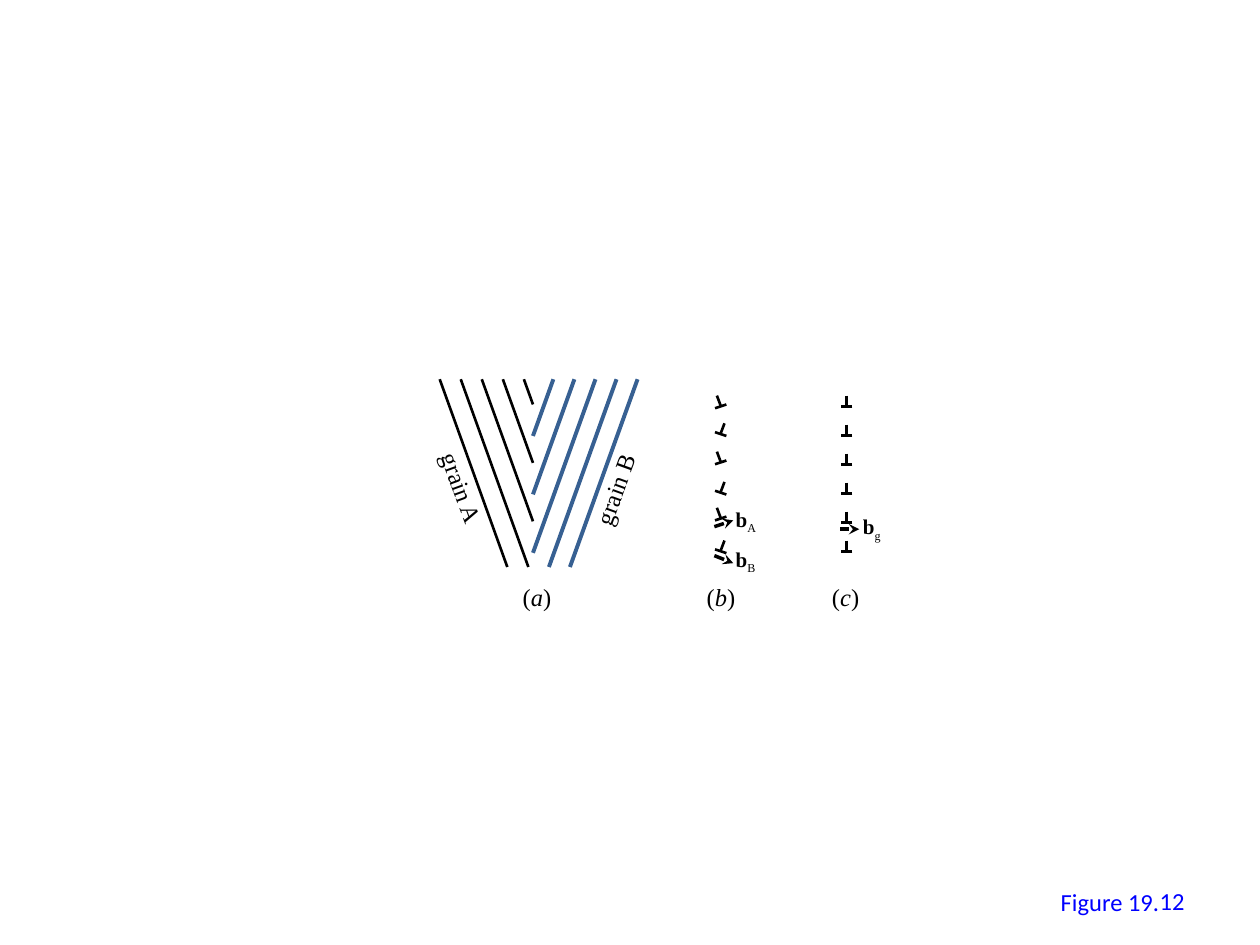
from lxml import etree
from pptx import Presentation
from pptx.dml.color import RGBColor
from pptx.enum.shapes import MSO_CONNECTOR
from pptx.enum.text import MSO_ANCHOR, PP_ALIGN
from pptx.oxml.ns import qn
from pptx.util import Inches, Pt

STRAIGHT = MSO_CONNECTOR.STRAIGHT
MIDDLE = MSO_ANCHOR.MIDDLE
RIGHT = PP_ALIGN.RIGHT
COLORS = {"ink": "000000", "grain_b": "376092", "figure": "0000FF"}
SERIF, SANS = "Times New Roman", "Calibri"
SLIDE_W, SLIDE_H = Inches(10), Inches(7.5)
COLUMNS, ROWS = 1000, 750


def x_at(column):
    return round(column * SLIDE_W / COLUMNS)


def y_at(row):
    return round(row * SLIDE_H / ROWS)


def add_line(shapes, start, end, color="ink", weight=1.5, arrow=False):
    line = shapes.add_connector(
        STRAIGHT, x_at(start[0]), y_at(start[1]), x_at(end[0]), y_at(end[1]))
    line.line.color.rgb = RGBColor.from_string(COLORS[color])
    line.line.width = Pt(weight)
    properties = line._element.spPr
    if arrow:
        etree.SubElement(properties.find(qn("a:ln")), qn("a:tailEnd"), type="stealth")
    etree.SubElement(properties, qn("a:effectLst"))


def add_label(slide, box, words, size=14, font=SERIF, color="ink", wrap=False):
    left, top, width, height = box
    label = slide.shapes.add_textbox(x_at(left), y_at(top), x_at(width), y_at(height))
    label.text_frame.word_wrap = wrap
    paragraph = label.text_frame.paragraphs[0]
    for word in words:
        paragraph.add_run().text = word
    paragraph.font.size = Pt(size)
    paragraph.font.name = font
    paragraph.font.color.rgb = RGBColor.from_string(COLORS[color])
    for run in paragraph.runs:
        run.font.size = Pt(size)
        run.font.name = font
        run.font.color.rgb = RGBColor.from_string(COLORS[color])
    return label


def add_caption(slide, center, letter):
    caption = add_label(slide, (center - 21.5, 457, 43, 34), ["(", letter, ")"])
    caption.text_frame.paragraphs[0].runs[1].font.italic = True


def add_burgers_vector(slide, start, end, label_at, subscript):
    add_line(slide.shapes, start, end, weight=2, arrow=True)
    label = add_label(slide, (*label_at, 38, 30), ["b", subscript], size=12)
    symbol, index = label.text_frame.paragraphs[0].runs
    symbol.font.bold = True
    index._r.get_or_add_rPr().set("baseline", "-25000")


def add_dislocation(shapes, center, top, lean=0):
    foot, tilt = top + 8.5, 1.5 * lean
    add_line(shapes, (center + 3 * lean, top), (center, top + 8))
    add_line(shapes, (center + 4.5, foot + tilt), (center - 4.5, foot - tilt))


def draw_grains(slide, box):
    left, top, width, height = box
    boundary, gap, slope = left + 74, 16.7, 0.36
    grains = ((left, 1, "ink", 1.5), (left + width, -1, "grain_b", 2.25))
    for edge, direction, color, weight in grains:
        for plane in range(5):
            start = edge + direction * gap * plane
            drop = min(height, abs(boundary - start) / slope)
            end = (start + direction * slope * drop, top + drop)
            add_line(slide.shapes, (start, top), end, color, weight)
    for name, label_left, angle in (("grain B", 449, 289.9), ("grain A", 327, 70.1)):
        add_label(slide, (label_left, top + 70, 79, 34), [name]).rotation = angle
    add_caption(slide, boundary + 3.5, "a")


def draw_alternating_wall(slide, box):
    left, top, width, height = box
    center = left + width / 2
    for lean, first, pitch in ((-1, top, 44.5), (1, top + 22, 46.5)):
        for step in range(3):
            symbol = slide.shapes.add_group_shape()
            add_dislocation(symbol.shapes, center, first + step * pitch, lean)
    bottom = top + height
    add_burgers_vector(slide, (left, bottom - 21), (left + 15, bottom - 26),
                       (left + 7, bottom - 42), "A")
    add_burgers_vector(slide, (left, bottom + 2), (left + 15, bottom + 8),
                       (left + 7, bottom - 10), "B")
    add_caption(slide, center + 0.5, "b")


def draw_equivalent_wall(slide, box):
    left, top, width, height = box
    center, pitch = left + width / 2, 23
    wall = slide.shapes.add_group_shape()
    for step in range(6):
        add_dislocation(wall.shapes, center, top + step * pitch)
    arrow_row = top + height - 19
    add_burgers_vector(slide, (left, arrow_row), (left + 15, arrow_row),
                       (left + 8, arrow_row - 17), "g")
    add_caption(slide, center, "c")


def draw_figure_number(slide, box):
    left, top, width, height = box
    add_label(slide, (left + 115, top + 4, 99, 34), ["Figure 19."],
              font=SANS, color="figure")
    number = add_label(slide, box, ["12"], font=SANS, color="figure", wrap=True)
    number.text_frame.vertical_anchor = MIDDLE
    number.text_frame.paragraphs[0].alignment = RIGHT


def main():
    presentation = Presentation()
    presentation.slide_width, presentation.slide_height = SLIDE_W, SLIDE_H
    slide = presentation.slides.add_slide(presentation.slide_layouts[6])
    draw_grains(slide, (349, 301, 157, 149))
    draw_alternating_wall(slide, (567, 314, 10, 125))
    draw_equivalent_wall(slide, (667, 314, 10, 125))
    draw_figure_number(slide, (717, 695, 233, 40))
    presentation.save("out.pptx")


if __name__ == "__main__":
    main()
